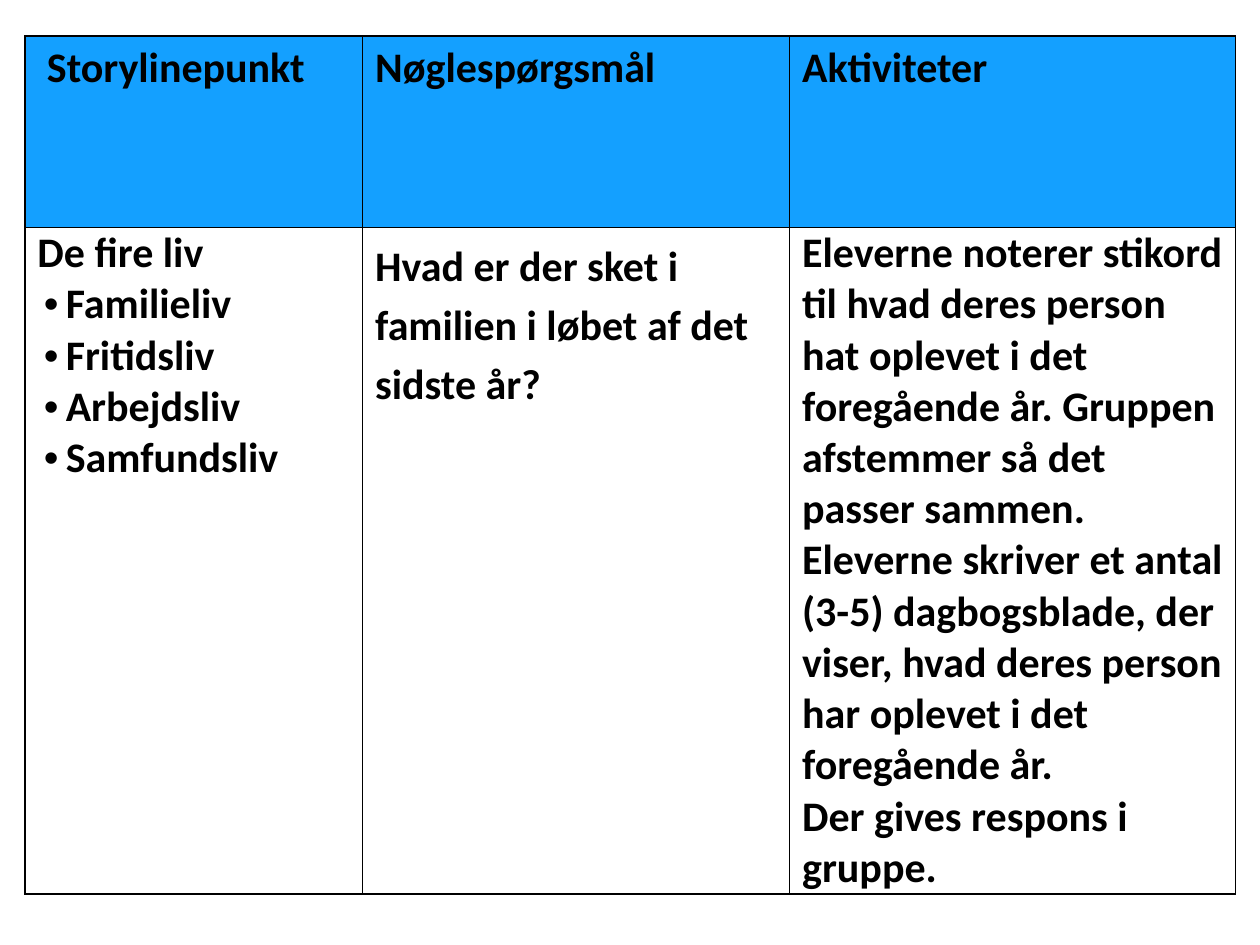
from lxml import etree
from pptx import Presentation
from pptx.dml.color import RGBColor
from pptx.oxml.ns import qn
from pptx.util import Pt

BLACK, BLUE = "000000", "14A0FF"
FONT, SIZE = "Calibri", 24
COL_WIDTHS = [193, 244, 255]
ROW_HEIGHTS = [109.5, 374.5]

HEADERS = ["Storylinepunkt", "Nøglespørgsmål", "Aktiviteter"]
LIVES = ["Familieliv", "Fritidsliv", "Arbejdsliv", "Samfundsliv"]
QUESTION = "Hvad er der sket i familien i løbet af det sidste år?"
ACTIVITIES = [
    "Eleverne noterer stikord til hvad deres person hat oplevet i det "
    "foregående år. Gruppen afstemmer så det passer sammen.",
    "Eleverne skriver et antal (3-5) dagbogsblade, der viser, hvad deres "
    "person har oplevet i det foregående år.",
    "Der gives respons i gruppe.",
]


def rgb(value):
    return RGBColor.from_string(value)


def set_indent(p, left, first=0):
    pPr = p._p.get_or_add_pPr()
    pPr.set("marL", str(Pt(left)))
    pPr.set("indent", str(Pt(first)))
    return pPr


def set_bullet(p):
    pPr = set_indent(p, 16.2, -12.6)
    etree.SubElement(pPr, qn("a:buFont")).set("typeface", "Arial")
    etree.SubElement(pPr, qn("a:buChar")).set("char", "•")


def set_borders(cell):
    tcPr = cell._tc.get_or_add_tcPr()
    for i, side in enumerate(("lnL", "lnR", "lnT", "lnB")):
        ln = etree.Element(qn(f"a:{side}"), w=str(Pt(1)))
        fill = etree.SubElement(ln, qn("a:solidFill"))
        etree.SubElement(fill, qn("a:srgbClr")).set("val", BLACK)
        tcPr.insert(i, ln)


def write_cell(cell, lines):
    """Write one paragraph per line and return the paragraphs."""
    tf = cell.text_frame
    tf.word_wrap = True
    for i, line in enumerate(lines):
        p = tf.add_paragraph() if i else tf.paragraphs[0]
        r = p.add_run()
        r.text = line
        r.font.name, r.font.size, r.font.bold = FONT, Pt(SIZE), True
        r.font.color.rgb = rgb(BLACK)
    return tf.paragraphs


def add_storyline_table(s, left, top, width, height):
    table = s.shapes.add_table(2, 3, Pt(left), Pt(top), Pt(width), Pt(height)).table
    table.horz_banding = False
    for col, w in zip(table.columns, COL_WIDTHS):
        col.width = Pt(w)
    for row, h in zip(table.rows, ROW_HEIGHTS):
        row.height = Pt(h)

    body = [["De fire liv", *LIVES], [QUESTION], ACTIVITIES]
    for c, (header, lines) in enumerate(zip(HEADERS, body)):
        head, cell = table.cell(0, c), table.cell(1, c)
        head_paragraphs = write_cell(head, [header])
        paragraphs = write_cell(cell, lines)
        head.fill.solid()
        head.fill.fore_color.rgb = rgb(BLUE)
        cell.fill.background()
        set_borders(head)
        set_borders(cell)
        if c == 0:
            set_indent(head_paragraphs[0], 5.4)
            for p in paragraphs[1:]:
                set_bullet(p)
        if c == 1:
            paragraphs[0].line_spacing = 1.15
        else:
            cell.margin_top = cell.margin_bottom = Pt(0)


def main():
    prs = Presentation()
    prs.slide_width, prs.slide_height = Pt(720), Pt(540)
    s = prs.slides.add_slide(prs.slide_layouts[6])
    add_storyline_table(s, 14.2, 20.6, sum(COL_WIDTHS), sum(ROW_HEIGHTS))
    prs.save("out.pptx")


if __name__ == "__main__":
    main()
